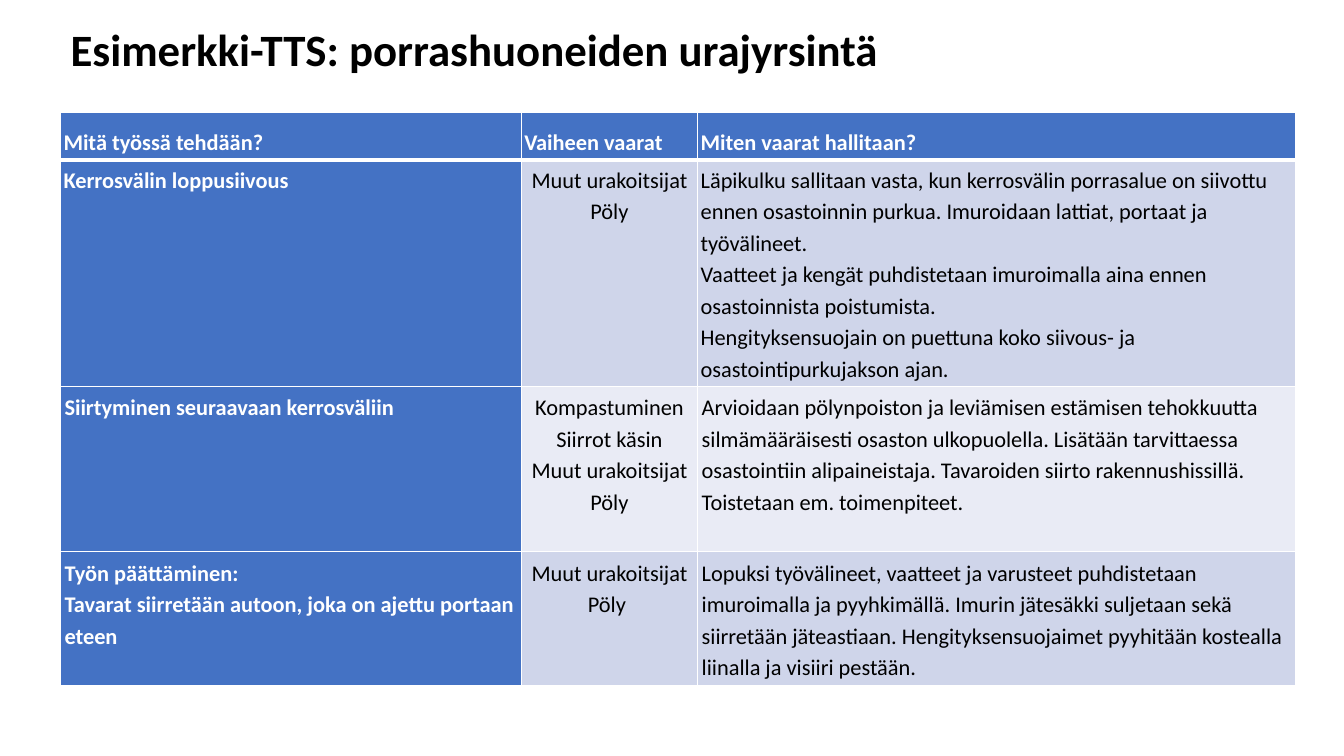
from copy import deepcopy

from pptx import Presentation
from pptx.dml.color import RGBColor
from pptx.enum.text import MSO_ANCHOR as Anchor, PP_ALIGN as Align
from pptx.oxml import parse_xml
from pptx.oxml.ns import nsdecls, qn
from pptx.util import Inches, Pt

BLUE, WHITE, BLACK = "4472C4", "FFFFFF", "000000"
BANDS = ["CFD5EA", "E9EBF5"]
WIDTHS = [4.57, 1.75, 5.93]
HEIGHTS = [0.46, 2.24, 1.64, 1.33]
HEAD = {"name": "Calibri", "size": Pt(32), "bold": True}
BOLD = {"name": "Calibri", "size": Pt(16), "bold": True}
BODY = {"name": "Calibri", "size": Pt(16), "bold": False}
ROWS = [
    [["Mitä työssä tehdään?"], ["Vaiheen vaarat"], ["Miten vaarat hallitaan?"]],
    [
        ["Kerrosvälin loppusiivous"],
        ["Muut urakoitsijat", "Pöly"],
        ["Läpikulku sallitaan vasta, kun kerrosvälin porrasalue on siivottu "
         "ennen osastoinnin purkua. Imuroidaan lattiat, portaat ja työvälineet. \n"
         "Vaatteet ja kengät puhdistetaan imuroimalla aina ennen "
         "osastoinnista poistumista. \n"
         "Hengityksensuojain on puettuna koko siivous- ja "
         "osastointipurkujakson ajan."],
    ],
    [
        ["Siirtyminen seuraavaan kerrosväliin"],
        ["Kompastuminen", "Siirrot käsin", "Muut urakoitsijat", "Pöly"],
        ["Arvioidaan pölynpoiston ja leviämisen estämisen tehokkuutta "
         "silmämääräisesti osaston ulkopuolella. Lisätään tarvittaessa "
         "osastointiin alipaineistaja. Tavaroiden siirto rakennushissillä. "
         "Toistetaan em. toimenpiteet."],
    ],
    [
        ["Työn päättäminen:",
         "Tavarat siirretään autoon, joka on ajettu portaan eteen"],
        ["Muut urakoitsijat", "Pöly "],
        ["Lopuksi työvälineet, vaatteet ja varusteet puhdistetaan "
         "imuroimalla ja pyyhkimällä. Imurin jätesäkki suljetaan sekä "
         "siirretään jäteastiaan. Hengityksensuojaimet pyyhitään kostealla "
         "liinalla ja visiiri pestään."],
    ],
]


def paint(target, color):
    """Set a colour format or a solid fill from a hex string."""
    if hasattr(target, "solid"):
        target.solid()
        target = target.fore_color
    target.rgb = RGBColor.from_string(color)


def assign(target, values):
    """Set attributes from a dict."""
    for key, value in values.items():
        setattr(target, key, value)


def write(frame, lines, font, color, para):
    """Fill a text frame with one paragraph per line."""
    for index, line in enumerate(lines):
        item = frame.add_paragraph() if index else frame.paragraphs[0]
        item.text = line
        assign(item, para)
        for run in item.runs:
            assign(run.font, font)
            paint(run.font.color, color)
        for gap in item._p.findall(qn("a:br")):
            gap.append(deepcopy(item.runs[0]._r.rPr))


def border(cell, sides):
    """Draw white cell borders, given side names and widths in points."""
    props = cell._tc.get_or_add_tcPr()
    for index, (side, width) in enumerate(sides.items()):
        props.insert(index, parse_xml(
            f'<a:{side} {nsdecls("a")} w="{Pt(width)}"><a:solidFill>'
            f'<a:srgbClr val="{WHITE}"/></a:solidFill></a:{side}>'))


def add_title(slide, text):
    """Place and format the slide title."""
    title = slide.shapes.title
    assign(title, {"left": Inches(0.6), "top": Inches(0.07),
                   "width": Inches(10.95), "height": Inches(0.89)})
    title.text_frame.vertical_anchor = Anchor.MIDDLE
    write(title.text_frame, [text], HEAD, BLACK,
          {"alignment": Align.LEFT, "line_spacing": 0.9})


def fill_cell(cell, lines, row, col):
    """Format one cell by its place in the grid."""
    key = row == 0 or col == 0
    inset = Inches(0.03 if row < 2 else 0.04)
    sides = ("left", "right", "top", "bottom")
    assign(cell, {f"margin_{side}": inset for side in sides})
    paint(cell.fill, BLUE if key else BANDS[(row - 1) % 2])
    border(cell, {"lnL": 1, "lnR": 1, "lnT": 3 if row == 1 else 1,
                  "lnB": 1 if row else 3})
    middle = row > 0 and col == 1
    write(cell.text_frame, lines, BOLD if key else BODY,
          WHITE if key else BLACK,
          {"alignment": Align.CENTER if middle else Align.LEFT,
           "line_spacing": 1.15 if row else 1.5})


def add_grid(slide):
    """Add the table of work phases, hazards and controls."""
    grid = slide.shapes.add_table(
        len(ROWS), len(WIDTHS), Inches(0.6), Inches(1.12),
        Inches(sum(WIDTHS)), Inches(sum(HEIGHTS))).table
    grid.horz_banding = False
    for col, width in zip(grid.columns, WIDTHS):
        col.width = Inches(width)
    for row, height in zip(grid.rows, HEIGHTS):
        row.height = Inches(height)
    for row, cells in enumerate(ROWS):
        for col, lines in enumerate(cells):
            fill_cell(grid.cell(row, col), lines, row, col)


def main():
    """Build and save the slide."""
    deck = Presentation()
    assign(deck, {"slide_width": Inches(13.33), "slide_height": Inches(7.5)})
    slide = deck.slides.add_slide(deck.slide_layouts[5])
    add_title(slide, "Esimerkki-TTS: porrashuoneiden urajyrsintä")
    add_grid(slide)
    deck.save("out.pptx")


if __name__ == "__main__":
    main()
